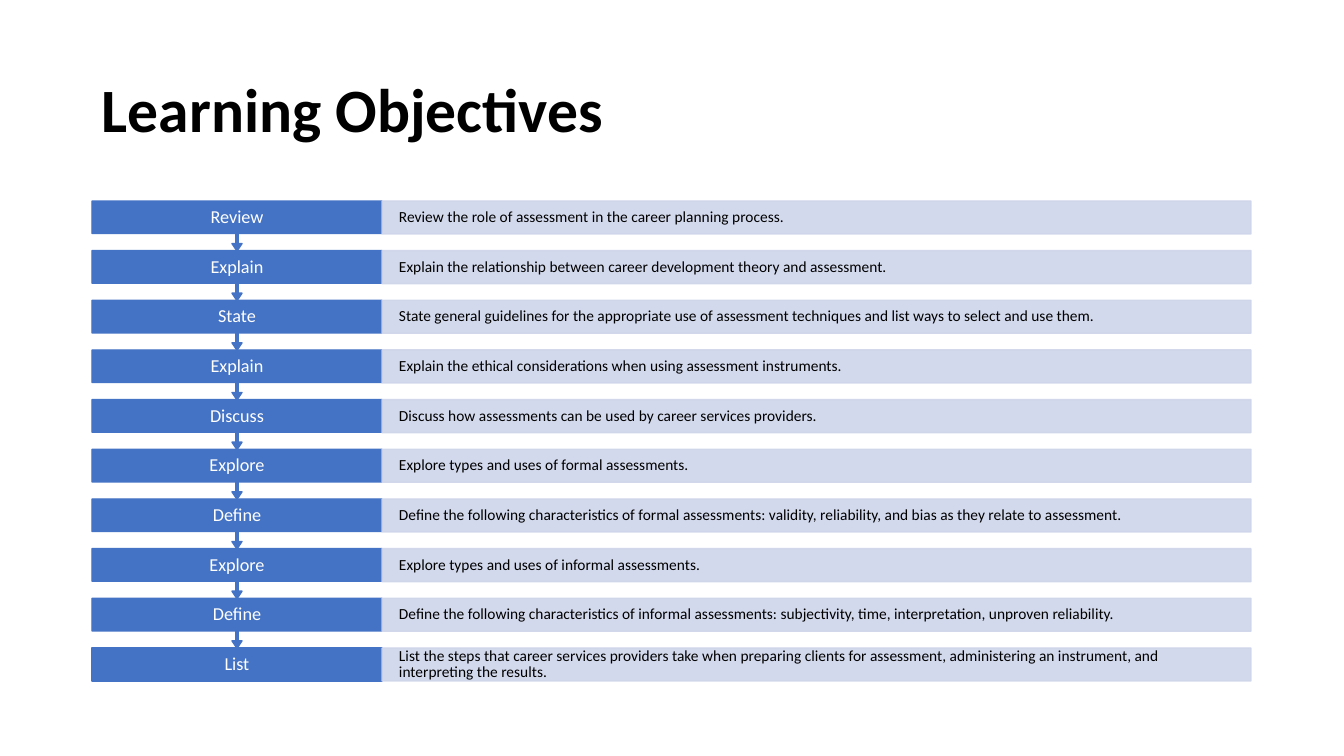
from lxml import etree
from pptx import Presentation
from pptx.dml.color import RGBColor
from pptx.enum.shapes import MSO_SHAPE
from pptx.enum.text import MSO_ANCHOR, PP_ALIGN
from pptx.oxml.ns import qn
from pptx.util import Pt

RECT, CALL = MSO_SHAPE.RECTANGLE, MSO_SHAPE.UP_ARROW_CALLOUT
MID, LEFT, CENTER = MSO_ANCHOR.MIDDLE, PP_ALIGN.LEFT, PP_ALIGN.CENTER
BLUE = RGBColor(0x44, 0x72, 0xC4)
PALE = RGBColor(0xCF, 0xD5, 0xEA)
WHITE = RGBColor(0xFF, 0xFF, 0xFF)
BLACK = RGBColor(0x00, 0x00, 0x00)
SCALE = 914400 / 100.8

STEPS = [
    ("Review", "Review the role of assessment in the career planning process."),
    ("Explain", "Explain the relationship between career development theory and assessment."),
    ("State", "State general guidelines for the appropriate use of assessment techniques and list ways to select and use them."),
    ("Explain", "Explain the ethical considerations when using assessment instruments."),
    ("Discuss", "Discuss how assessments can be used by career services providers."),
    ("Explore", "Explore types and uses of formal assessments."),
    ("Define", "Define the following characteristics of formal assessments: validity, reliability, and bias as they relate to assessment."),
    ("Explore", "Explore types and uses of informal assessments."),
    ("Define", "Define the following characteristics of informal assessments: subjectivity, time, interpretation, unproven reliability."),
    ("List", "List the steps that career services providers take when preparing clients for assessment, administering an instrument, and interpreting the results."),
]

prs = Presentation()
prs.slide_width, prs.slide_height = int(1344 * SCALE), int(756 * SCALE)
slide = prs.slides.add_slide(prs.slide_layouts[6])


def add_text(box, text, pad, align, form):
    area = [int(n * SCALE) for n in box]
    frame = slide.shapes.add_textbox(*area).text_frame
    frame.word_wrap = True
    frame.vertical_anchor = MID
    across, down = [int(n * SCALE) for n in pad]
    frame.margin_left = frame.margin_right = across
    frame.margin_top = frame.margin_bottom = down
    para = frame.paragraphs[0]
    para.alignment = align
    para.line_spacing = 0.9
    run = para.add_run()
    run.text = text
    run.font.name = "Calibri"
    run.font.color.rgb = form["color"]
    for key in ("size", "bold"):
        setattr(run.font, key, form[key])


def add_block(kind, box, color):
    area = [int(n * SCALE) for n in box]
    shape = slide.shapes.add_shape(kind, *area)
    shape.shadow.inherit = False
    shape.fill.solid()
    shape.fill.fore_color.rgb = color
    shape.line.color.rgb = color
    shape.line.width = Pt(1)
    return shape


HEAD = {"size": Pt(44), "bold": True, "color": BLACK}
VERB = {"size": Pt(13), "bold": False, "color": WHITE}
GOAL = {"size": Pt(11), "bold": False, "color": BLACK}

add_text((92, 40, 1159, 146), "Learning Objectives", (10, 5), LEFT, HEAD)

TOP, SPAN, HIGH, DROP = 201, 447, 33, 50
last = len(STEPS) - 1
for i in range(last, -1, -1):
    verb, goal = STEPS[i]
    y = TOP + i * SPAN / last
    left = (92, y, 290, HIGH)
    right = (382, y, 869, HIGH)
    if i == last:
        add_block(RECT, left, BLUE)
    else:
        call = add_block(CALL, (92, y, 290, DROP), BLUE)
        call.rotation = 180
        for k, ratio in enumerate((0.05, 0.1, 0.15, 0.65)):
            call.adjustments[k] = ratio
    add_text(left, verb, (20, 10), CENTER, VERB)
    bar = add_block(RECT, right, PALE)
    for tint in bar._element.spPr.iter(qn("a:srgbClr")):
        etree.SubElement(tint, qn("a:alpha")).set("val", "90000")
    add_text(right, goal, (17, 15), LEFT, GOAL)

prs.save("out.pptx")
